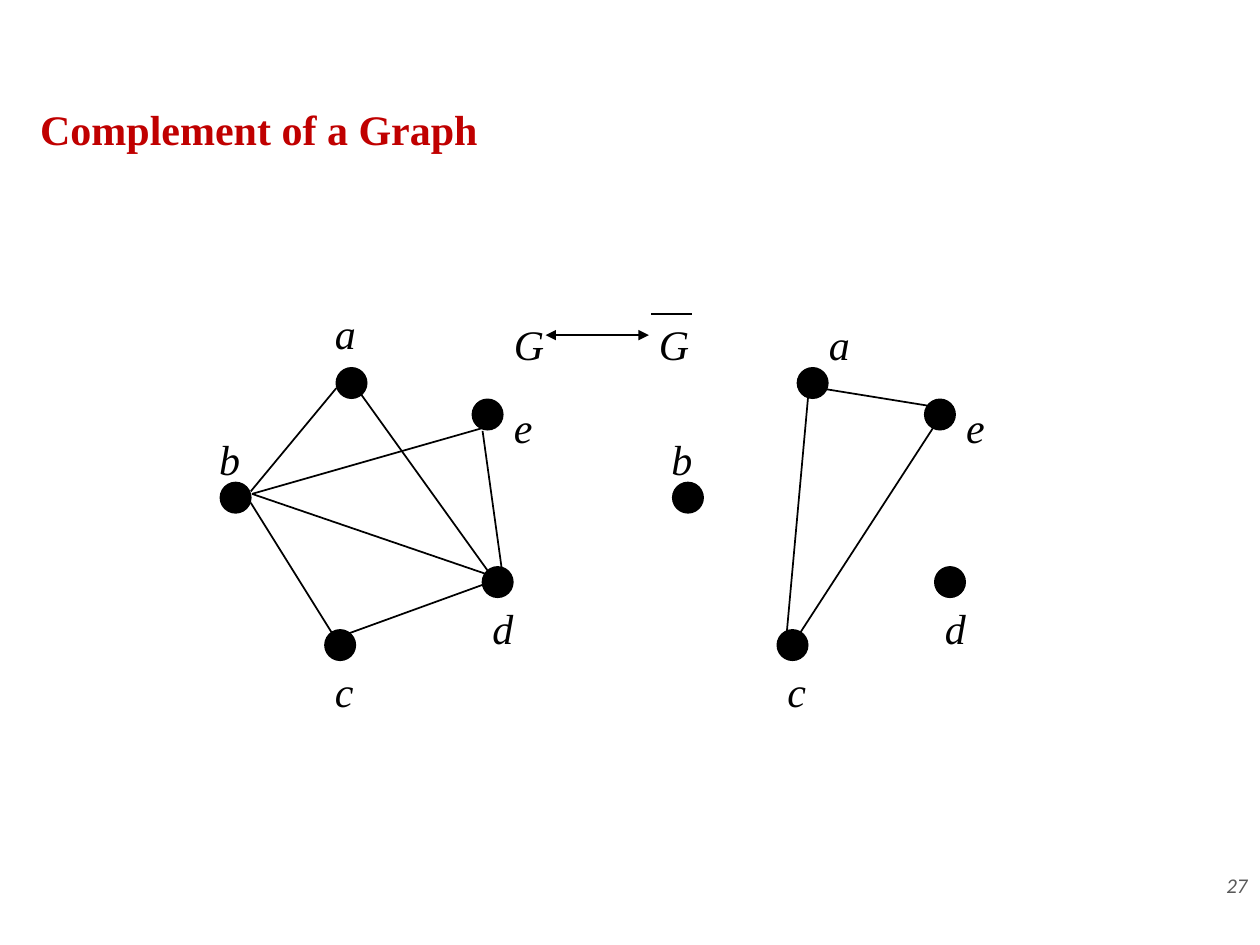
from lxml.etree import SubElement
from pptx import Presentation
from pptx.dml.color import RGBColor
from pptx.enum.shapes import MSO_CONNECTOR, MSO_SHAPE
from pptx.enum.text import MSO_ANCHOR, MSO_AUTO_SIZE, PP_ALIGN
from pptx.oxml.ns import qn
from pptx.util import Inches, Pt

COLORS = {"title": "C00000", "ink": "000000", "number": "595959"}
SERIF = "Times New Roman"
DOT = 0.24

# Offsets from the top left corner of a graph's box
VERTICES = {"a": (1.03, 0.53), "b": (0.11, 1.44), "c": (0.94, 2.61),
            "d": (2.19, 2.11), "e": (2.11, 0.78)}
LABELS = {"a": (0.92, 0), "b": (0, 1), "c": (0.92, 2.84),
          "d": (2.17, 2.34), "e": (2.34, 0.75)}
GRAPH_EDGES = [
    ((1.03, 0.69), (0.35, 1.51)),  # a-b
    ((0.36, 1.53), (2.18, 1.01)),  # b-e
    ((2.19, 1.03), (2.35, 2.18)),  # e-d
    ((2.36, 2.19), (1.01, 2.68)),  # d-c
    ((1.03, 2.69), (0.35, 1.60)),  # c-b
    ((1.19, 0.69), (2.26, 2.18)),  # a-d
    ((0.36, 1.53), (2.26, 2.18)),  # b-d
]
COMPLEMENT_EDGES = [
    ((1.27, 0.69), (2.26, 0.85)),  # a-e
    ((1.19, 0.69), (1.01, 2.68)),  # a-c
    ((2.27, 0.86), (1.09, 2.68)),  # e-c
]


def color(name):
    return RGBColor.from_string(COLORS[name])


def add_text(page, box, text, size=24, font=SERIF, ink="ink",
             bold=False, italic=False, wrap=False):
    shape = page.shapes.add_textbox(*map(Inches, box))
    frame = shape.text_frame
    frame.text = text
    frame.word_wrap = wrap
    frame.auto_size = MSO_AUTO_SIZE.NONE
    style = frame.paragraphs[0].runs[0].font
    style.name, style.size = font, Pt(size)
    style.bold, style.italic = bold, italic
    style.color.rgb = color(ink)
    return frame


def add_line(page, start, end, arrows=False):
    line = page.shapes.add_connector(MSO_CONNECTOR.STRAIGHT,
                                     *map(Inches, (*start, *end)))
    line.line.width = Pt(1)
    line.line.color.rgb = color("ink")
    if arrows:
        for tag in ("a:headEnd", "a:tailEnd"):
            SubElement(line.line._get_or_add_ln(), qn(tag), type="triangle")
    SubElement(line._element.spPr, qn("a:effectLst"))


def add_graph(page, left, top, edges, vertices, labels):
    for start, end in edges:
        add_line(page, (left + start[0], top + start[1]),
                 (left + end[0], top + end[1]))
    for name, (x, y) in vertices.items():
        dot = page.shapes.add_shape(
            MSO_SHAPE.OVAL, *map(Inches, (left + x, top + y, DOT, DOT)))
        dot.shadow.inherit = False
        dot.fill.solid()
        dot.fill.fore_color.rgb = color("ink")
        dot.line.color.rgb = color("ink")
        dot.line.width = Pt(1)
        x, y = labels[name]
        add_text(page, (left + x, top + y, 0.36, 0.5), name, italic=True)


def add_relation(page, left, top):
    """G, a double arrow and G with a bar over it."""
    for x in (left, left + 1.15):
        add_text(page, (x, top, 0.45, 0.5), "G", italic=True)
    add_line(page, (left + 1.19, top + 0.01), (left + 1.51, top + 0.01))
    add_line(page, (left + 0.35, top + 0.18), (left + 1.17, top + 0.18),
             arrows=True)


def add_page_number(page, box):
    frame = add_text(page, box, "27", size=12, font="Calibri", ink="number",
                     italic=True, wrap=True)
    frame.vertical_anchor = MSO_ANCHOR.MIDDLE
    frame.paragraphs[0].alignment = PP_ALIGN.RIGHT


def main():
    deck = Presentation()
    deck.slide_width, deck.slide_height = Inches(10), Inches(7.5)
    page = deck.slides.add_slide(deck.slide_layouts[6])

    add_text(page, (0.22, 0.77, 9.28, 0.5), "Complement of a Graph",
             ink="title", bold=True, wrap=True)
    add_relation(page, 3.98, 2.48)
    add_graph(page, 1.64, 2.39, GRAPH_EDGES, VERTICES, LABELS)
    # In the complement, vertex a and its label sit further right
    add_graph(page, 5.23, 2.39, COMPLEMENT_EDGES,
              {**VERTICES, "a": (1.10, 0.53)}, {**LABELS, "a": (1.25, 0.09)})
    add_page_number(page, (7.75, 6.95, 2.25, 0.15))

    deck.save("out.pptx")


if __name__ == "__main__":
    main()
